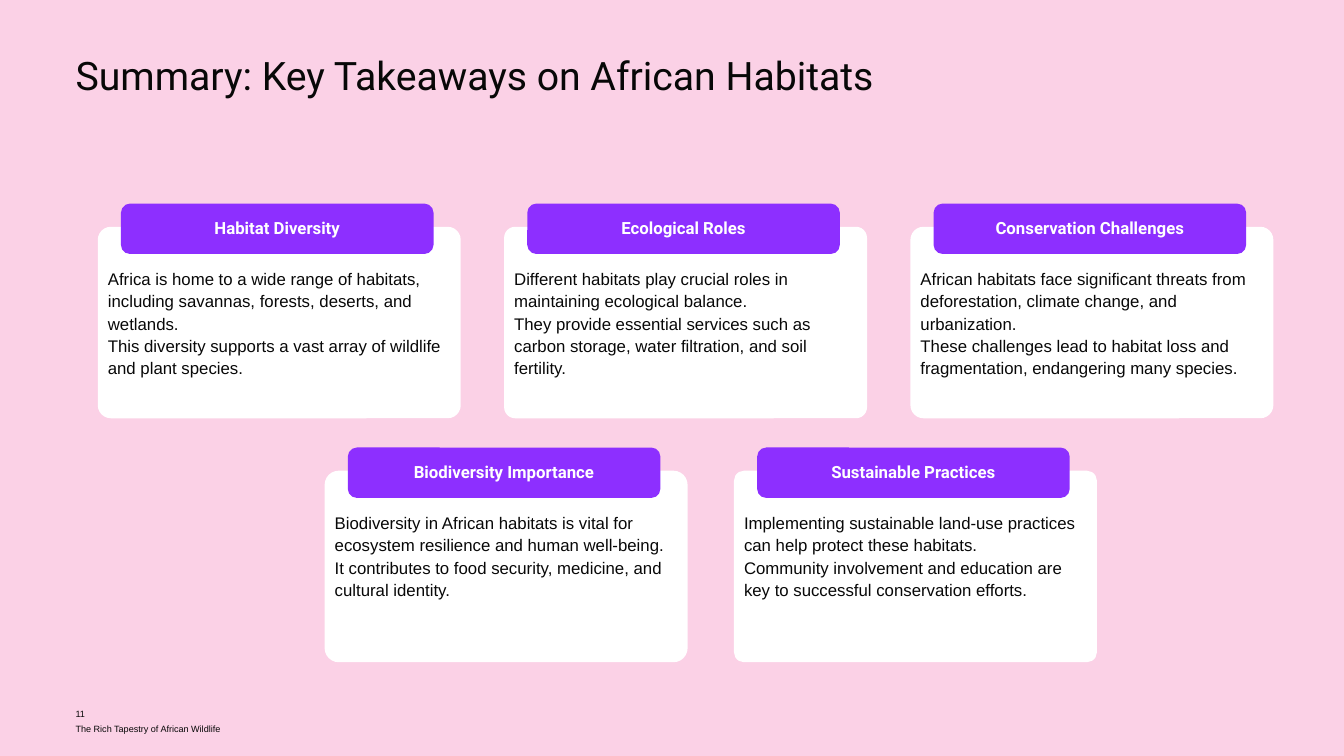
from pptx import Presentation
from pptx.dml.color import RGBColor
from pptx.enum.shapes import MSO_SHAPE as Shape
from pptx.enum.text import MSO_ANCHOR as Anchor, PP_ALIGN as Align
from pptx.util import Inches, Pt

PINK = RGBColor(0xFB, 0xD1, 0xE6)
PURPLE = RGBColor(0x8D, 0x2F, 0xFF)
WHITE = RGBColor(0xFF, 0xFF, 0xFF)
INK = RGBColor(0x08, 0x08, 0x08)

PAGE_WIDE, PAGE_HIGH = 13.33, 7.5
WIDE, HIGH = 3.6, 1.9
TAB_WIDE, TAB_HIGH, TAB_SHIFT = 3.1, 0.5, 0.23
SIDE, DROP = 0.1, 0.4

ROWS = [
    (0.97, 2.25, 4.03, [
        ("Habitat Diversity", 0.13, [
            "Africa is home to a wide range of habitats, including savannas, "
            "forests, deserts, and wetlands.",
            "This diversity supports a vast array of wildlife and plant species."]),
        ("Ecological Roles", 0.11, [
            "Different habitats play crucial roles in maintaining ecological balance.",
            "They provide essential services such as carbon storage, water "
            "filtration, and soil fertility."]),
        ("Conservation Challenges", 0.13, [
            "African habitats face significant threats from deforestation, "
            "climate change, and urbanization.",
            "These challenges lead to habitat loss and fragmentation, "
            "endangering many species."]),
    ]),
    (3.22, 4.67, 4.06, [
        ("Biodiversity Importance", 0.14, [
            "Biodiversity in African habitats is vital for ecosystem resilience "
            "and human well-being.",
            "It contributes to food security, medicine, and cultural identity."]),
        ("Sustainable Practices", 0.1, [
            "Implementing sustainable land-use practices can help protect "
            "these habitats.",
            "Community involvement and education are key to successful "
            "conservation efforts."]),
    ]),
]


def write(shape, lines, font, size, color, bold=False, align=Align.LEFT,
          anchor=Anchor.TOP, space=1.0):
    """Fill a shape with evenly formatted paragraphs and no margins."""
    frame = shape.text_frame
    frame.word_wrap = True
    frame.vertical_anchor = anchor
    frame.margin_left = frame.margin_right = Inches(0)
    frame.margin_top = frame.margin_bottom = Inches(0)
    frame.text = "\n".join(lines)
    for para in frame.paragraphs:
        para.alignment = align
        para.line_spacing = space
        para.font.name = font
        para.font.size = Pt(size)
        para.font.bold = bold
        para.font.color.rgb = color


def add_panel(slide, kind, left, top, width, height, fill):
    """Add a plain filled shape without line or shadow."""
    panel = slide.shapes.add_shape(kind, Inches(left), Inches(top),
                                   Inches(width), Inches(height))
    panel.fill.solid()
    panel.fill.fore_color.rgb = fill
    panel.line.fill.background()
    panel.shadow.inherit = False
    return panel


def add_round(slide, left, top, width, height, radius, fill):
    """Add a rounded panel with the given corner radius."""
    panel = add_panel(slide, Shape.ROUNDED_RECTANGLE, left, top, width, height, fill)
    panel.adjustments[0] = radius / height
    return panel


def add_text(slide, left, top, width, height, lines, *style, **more):
    """Add a text box with the given lines and style."""
    box = slide.shapes.add_textbox(Inches(left), Inches(top),
                                   Inches(width), Inches(height))
    write(box, lines, *style, **more)


def add_card(slide, left, top, head, radius, lines):
    """Add a white card with a purple heading tab over its top edge."""
    add_round(slide, left, top, WIDE, HIGH, radius, WHITE)
    add_text(slide, left + SIDE, top + DROP, WIDE - 2 * SIDE, HIGH - DROP,
             lines, "Arial", 12, INK, space=1.1)
    tab = add_round(slide, left + TAB_SHIFT, top - TAB_SHIFT,
                    TAB_WIDE, TAB_HIGH, 0.09, PURPLE)
    write(tab, [head], "Roboto", 12, WHITE, bold=True, align=Align.CENTER,
          anchor=Anchor.MIDDLE, space=0.9)


def add_title(slide, text):
    """Place and format the slide title, with the pink backdrop behind it."""
    title = slide.shapes.title
    title.left, title.top = Inches(0.75), Inches(0.51)
    title.width, title.height = Inches(11.83), Inches(0.86)
    write(title, [text], "Roboto", 28, INK)
    back = add_panel(slide, Shape.RECTANGLE, 0, 0, PAGE_WIDE, PAGE_HIGH, PINK)
    title.element.addprevious(back.element)


def main():
    """Build and save the summary slide."""
    deck = Presentation()
    deck.slide_width, deck.slide_height = Inches(PAGE_WIDE), Inches(PAGE_HIGH)
    slide = deck.slides.add_slide(deck.slide_layouts[5])
    add_title(slide, "Summary: Key Takeaways on African Habitats")
    for left, top, step, cards in ROWS:
        for col, card in enumerate(cards):
            add_card(slide, left + col * step, top, *card)
    for top, width, text in [(7.03, 3, "11"),
                             (7.18, 6.9, "The Rich Tapestry of African Wildlife")]:
        add_text(slide, 0.75, top, width, 0.11, [text], "Arial", 6.5, INK,
                 anchor=Anchor.MIDDLE)
    deck.save("out.pptx")


if __name__ == "__main__":
    main()
